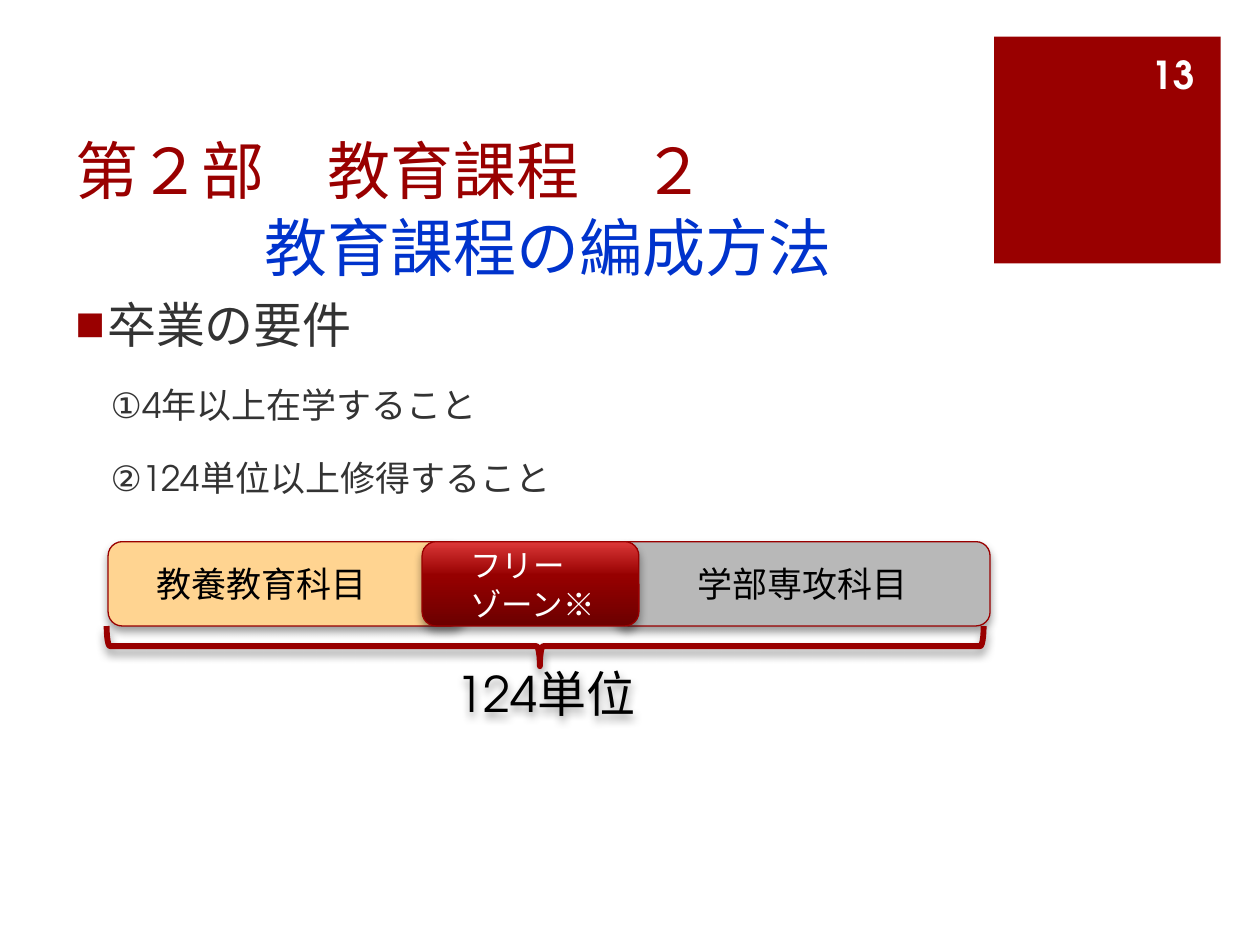
from copy import deepcopy

from lxml.etree import SubElement
from pptx import Presentation
from pptx.dml.color import RGBColor
from pptx.enum.shapes import MSO_SHAPE as Preset
from pptx.enum.text import MSO_ANCHOR as Anchor, PP_ALIGN as Align
from pptx.oxml.ns import qn
from pptx.util import Cm, Pt

FONT = "TeX Gyre Adventor"
RED, BLUE, GREY = "990000", "0033CC", "333333"
WHITE, BLACK = "FFFFFF", "000000"


def color(hex_string):
    return RGBColor.from_string(hex_string)


def cm_box(left, top, width, height):
    return Cm(left), Cm(top), Cm(width), Cm(height)


def write(shape, lines, size, ink, align=Align.LEFT, anchor=Anchor.MIDDLE,
          indent=0, spacing=None):
    """Fill a shape with equally styled paragraphs and return them."""
    frame = shape.text_frame
    frame.word_wrap = True
    frame.vertical_anchor = anchor
    frame.text = "\n".join(lines)
    for para in frame.paragraphs:
        para.alignment = align
        para.font.name = FONT
        para.font.size = Pt(size)
        para.font.color.rgb = color(ink)
        if spacing:
            para.line_spacing = Pt(spacing)
        if indent:
            set_indent(para, indent)
    return frame.paragraphs


def set_indent(para, left, first=0):
    props = para._p.get_or_add_pPr()
    props.set("marL", str(Cm(left)))
    props.set("indent", str(Cm(first)))


def add_bullet(para, mark, ink):
    props = para._p.get_or_add_pPr()
    # Bullet elements come before the default run properties.
    defaults = props.find(qn("a:defRPr"))
    parts = [SubElement(props, qn(tag)) for tag in ("a:buClr", "a:buFont", "a:buChar")]
    SubElement(parts[0], qn("a:srgbClr"), val=ink)
    parts[1].set("typeface", "Arial")
    parts[2].set("char", mark)
    if defaults is not None:
        props.append(defaults)


def add_shadow(shape):
    shape.shadow.inherit = False
    effects = shape._element.spPr.find(qn("a:effectLst"))
    shadow = SubElement(effects, qn("a:outerShdw"), blurRad=str(Pt(5.2)),
                        dist=str(Pt(3)), dir="5400000", rotWithShape="0")
    tone = SubElement(shadow, qn("a:srgbClr"), val=BLACK)
    SubElement(tone, qn("a:alpha"), val="40000")


def fill_gradient(shape, stops):
    """Fill from bottom to top with (position, colour) stops."""
    fill = shape.fill
    fill.gradient()
    fill.gradient_angle = 90
    stop_list = shape._element.spPr.find(f".//{qn('a:gsLst')}")
    while len(stop_list) < len(stops):
        stop_list.append(deepcopy(stop_list[0]))
    for stop, (position, ink) in zip(fill.gradient_stops, stops):
        stop.position = position
        stop.color.rgb = color(ink)


def add_page_marker(shapes, left, top, side):
    square = shapes.add_shape(Preset.RECTANGLE, *cm_box(left, top, side, side))
    square.shadow.inherit = False
    square.fill.solid()
    square.fill.fore_color.rgb = color(RED)
    square.line.fill.background()
    number = shapes.add_textbox(*cm_box(left + 2.9, top + 0.25, 1.4, 1.02))
    write(number, ["13"], 22, WHITE, Align.RIGHT)[0].font.bold = True


def add_title(shapes, left, top, width, height):
    title = shapes.add_textbox(*cm_box(left, top, width, height))
    title.text_frame.margin_bottom = 0
    part, topic = write(title, ["第２部　教育課程　２", "教育課程の編成方法"],
                        36, RED, anchor=Anchor.BOTTOM, spacing=44)
    topic.font.color.rgb = color(BLUE)
    set_indent(topic, 3.81)


def add_requirements(shapes, left, top, width, height):
    body = shapes.add_textbox(*cm_box(left, top, width, height))
    lines = ["卒業の要件", "①4年以上在学すること", "②124単位以上修得すること"]
    heading, *items = write(body, lines, 20, GREY, anchor=Anchor.TOP,
                            indent=0.71, spacing=23.5)
    for item in items:
        item.space_before = Pt(18)
    heading.font.size = Pt(28)
    heading.line_spacing = Pt(36)
    set_indent(heading, 0.64, -0.64)
    add_bullet(heading, "■", RED)


def add_block(shapes, left, top, width, height):
    block = shapes.add_shape(Preset.ROUNDED_RECTANGLE, *cm_box(left, top, width, height))
    block.line.color.rgb = color(RED)
    block.line.width = Pt(0.75)
    add_shadow(block)
    return block


def add_credit_diagram(shapes, left, top, width, height):
    """Three subject blocks in a row, with a brace and the total below."""
    subjects = [
        ("教養教育科目", 0, 7.19, "FFD491", Align.LEFT, 0.64),
        ("学部専攻科目", 10.21, 7.57, "B8B8B8", Align.CENTER, 0),
    ]
    for name, offset, span, paint, align, indent in subjects:
        block = add_block(shapes, left + offset, top, span, height)
        block.fill.solid()
        block.fill.fore_color.rgb = color(paint)
        write(block, [name], 20, BLACK, align, indent=indent)

    free_zone = add_block(shapes, left + 6.33, top, 4.37, height)
    fill_gradient(free_zone, [(0, "6C0000"), (0.6, "960000"), (1, "DC3838")])
    write(free_zone, ["フリー", "ゾーン※"], 18, WHITE, indent=0.64, spacing=22)

    # The upright brace is turned about its centre to lie under the row.
    depth, length = 0.81, width - 0.1
    middle_x, middle_y = left - 0.03 + length / 2, top + height + depth / 2
    brace = shapes.add_shape(Preset.LEFT_BRACE, *cm_box(
        middle_x - depth / 2, middle_y - length / 2, depth, length))
    brace.rotation = 270
    brace.adjustments[0] = 0.083
    brace.adjustments[1] = 0.494
    brace.fill.background()
    brace.line.color.rgb = color(RED)
    brace.line.width = Pt(3.35)
    add_shadow(brace)

    total = shapes.add_shape(Preset.RECTANGLE, *cm_box(left + 6.05, top + 2.11, 5.56, 1.88))
    total.fill.background()
    total.line.fill.background()
    add_shadow(total)
    write(total, ["124単位"], 28, BLACK, Align.CENTER)


def main():
    deck = Presentation()
    deck.slide_width, deck.slide_height = Cm(25.4), Cm(19.05)
    page = deck.slides.add_slide(deck.slide_layouts[6])
    add_page_marker(page.shapes, 20.04, 0.74, 4.57)
    add_title(page.shapes, 1.27, 2.54, 18.75, 3.18)
    add_requirements(page.shapes, 1.27, 5.72, 22.68, 12.22)
    diagram = page.shapes.add_group_shape()
    add_credit_diagram(diagram.shapes, 2.18, 10.92, 17.78, 1.7)
    deck.save("out.pptx")


if __name__ == "__main__":
    main()
